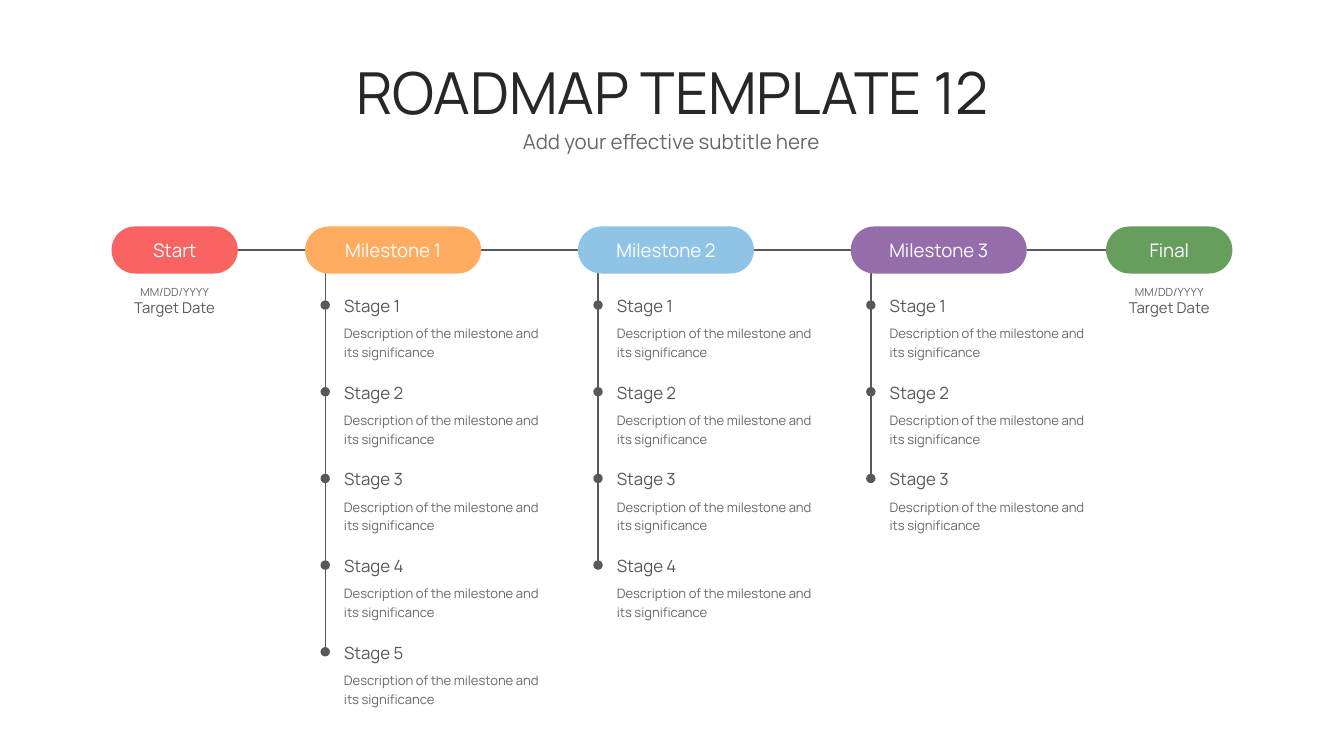
import pptx
import pptx.util
import pptx.dml.color
import pptx.enum.shapes
import pptx.enum.text
import pptx.oxml.ns
import lxml.etree

# Content
TITLE = "ROADMAP TEMPLATE 12"
SUBTITLE = "Add your effective subtitle here"
DATE = ("MM/DD/YYYY", "Target Date")
DESCRIPTION = "Description of the milestone and its significance"
ENDS = [("Start", "red"), ("Final", "green")]
MILESTONES = [  # name, colour, number of stages
    ("Milestone 1", "orange", 5),
    ("Milestone 2", "blue", 4),
    ("Milestone 3", "purple", 3),
]

THEME = {
    "font": "Manrope",
    "colors": {
        "title": "272727", "dark": "585858", "soft": "686868", "white": "FFFFFF",
        "red": "F96361", "orange": "FFAC60", "blue": "90C4E7",
        "purple": "956DAA", "green": "679E5E",
    },
    "sizes": {"title": 31, "subtitle": 11, "pill": 10, "stage": 9,
              "target": 8, "description": 7, "date": 6},
    "line": 0.75,
}

# Grid, in inches, on a 16:9 slide
WIDTH = 10
HEIGHT = WIDTH * 9 / 16
PILL_MIDDLE, PILL_HEIGHT = 1.86, 0.35
PILL_TOP = PILL_MIDDLE - PILL_HEIGHT / 2
LABEL_WIDTH, LABEL_HEIGHT = 0.88, 0.17
END_CENTERS, END_WIDTH = (1.3, 8.7), 0.94
COLUMN_LEFT, COLUMN_STEP, COLUMN_WIDTH = 2.27, 2.03, 1.31
ROW_TOP, ROW_STEP = 2.2, 2.58 / 4
SPINE_INSET, TEXT_INSET = 0.15, 0.29
DOT, DOT_DROP = 0.07, 0.07

SHAPES = pptx.enum.shapes.MSO_SHAPE
ALIGN = pptx.enum.text.PP_ALIGN
inches = pptx.util.Inches


def color(name):
    return pptx.dml.color.RGBColor.from_string(THEME["colors"][name])


def add_text(shapes, left, top, width, height, text, size, ink,
             align=ALIGN.CENTER, spacing=None):
    box = shapes.add_textbox(*map(inches, (left, top, width, height)))
    frame = box.text_frame
    frame.word_wrap = True
    frame.auto_size = pptx.enum.text.MSO_AUTO_SIZE.SHAPE_TO_FIT_TEXT
    frame.margin_left = frame.margin_right = 0
    frame.margin_top = frame.margin_bottom = 0
    para = frame.paragraphs[0]
    para.alignment = align
    if spacing:
        para.line_spacing = spacing
    span = para.add_run()
    span.text = text
    span.font.name = THEME["font"]
    span.font.size = pptx.util.Pt(THEME["sizes"][size])
    span.font.color.rgb = color(ink)


def add_solid(shapes, kind, left, top, width, height, fill):
    shape = shapes.add_shape(kind, *map(inches, (left, top, width, height)))
    shape.shadow.inherit = False
    shape.fill.solid()
    shape.fill.fore_color.rgb = color(fill)
    shape.line.fill.background()
    return shape


def add_pill(shapes, left, width, name, fill):
    pill = add_solid(shapes, SHAPES.ROUNDED_RECTANGLE, left, PILL_TOP,
                     width, PILL_HEIGHT, fill)
    pill.adjustments[0] = 0.5
    add_text(shapes, left + (width - LABEL_WIDTH) / 2, PILL_MIDDLE - LABEL_HEIGHT / 2,
             LABEL_WIDTH, LABEL_HEIGHT, name, "pill", "white")


def add_line(shapes, x1, y1, x2, y2):
    line = shapes.add_connector(pptx.enum.shapes.MSO_CONNECTOR.STRAIGHT,
                                *map(inches, (x1, y1, x2, y2)))
    line.line.color.rgb = color("dark")
    line.line.width = pptx.util.Pt(THEME["line"])
    lxml.etree.SubElement(line._element.spPr, pptx.oxml.ns.qn("a:effectLst"))


def add_stage(page, column, row):
    shapes = page.shapes.add_group_shape().shapes
    top = ROW_TOP + row * ROW_STEP
    spine, text_left = column + SPINE_INSET, column + TEXT_INSET
    add_solid(shapes, SHAPES.OVAL, spine - DOT / 2, top + DOT_DROP - DOT / 2,
              DOT, DOT, "dark")
    add_text(shapes, text_left, top, 1.09, 0.15,
             f"Stage {row + 1}", "stage", "dark", align=ALIGN.LEFT)
    add_text(shapes, text_left, top + 0.2, 1.56, 0.26,
             DESCRIPTION, "description", "soft", align=ALIGN.LEFT, spacing=1.2)


def main():
    deck = pptx.Presentation()
    deck.slide_width, deck.slide_height = inches(WIDTH), inches(HEIGHT)
    page = deck.slides.add_slide(deck.slide_layouts[6])

    # Heading
    add_text(page.shapes, 1.85, 0.42, 6.31, 0.52, TITLE, "title", "title")
    add_text(page.shapes, 2.82, 0.96, 4.35, 0.19, SUBTITLE, "subtitle", "soft")

    # Links between neighbouring pills
    columns = [COLUMN_LEFT + i * COLUMN_STEP for i in range(len(MILESTONES))]
    first, last = ((center - END_WIDTH / 2, END_WIDTH) for center in END_CENTERS)
    pills = [first, *((left, COLUMN_WIDTH) for left in columns), last]
    for (left, width), (following, _) in zip(pills, pills[1:]):
        add_line(page.shapes, left + width, PILL_MIDDLE, following, PILL_MIDDLE)

    # Start and final pills with their dates
    for center, (name, fill) in zip(END_CENTERS, ENDS):
        dates = page.shapes.add_group_shape().shapes
        add_text(dates, center - 0.5, 2.12, 1, 0.1, DATE[0], "date", "soft")
        add_text(dates, center - 0.55, 2.22, 1.1, 0.13, DATE[1], "target", "dark")
        end = page.shapes.add_group_shape().shapes
        add_pill(end, center - END_WIDTH / 2, END_WIDTH, name, fill)

    # Milestones with their stages
    for left, (name, fill, stages) in zip(columns, MILESTONES):
        spine = left + SPINE_INSET
        last_dot = ROW_TOP + (stages - 1) * ROW_STEP + DOT_DROP
        add_line(page.shapes, spine, PILL_MIDDLE, spine, last_dot)
        for row in range(stages):
            add_stage(page, left, row)
        add_pill(page.shapes, left, COLUMN_WIDTH, name, fill)

    deck.save("out.pptx")


if __name__ == "__main__":
    main()
